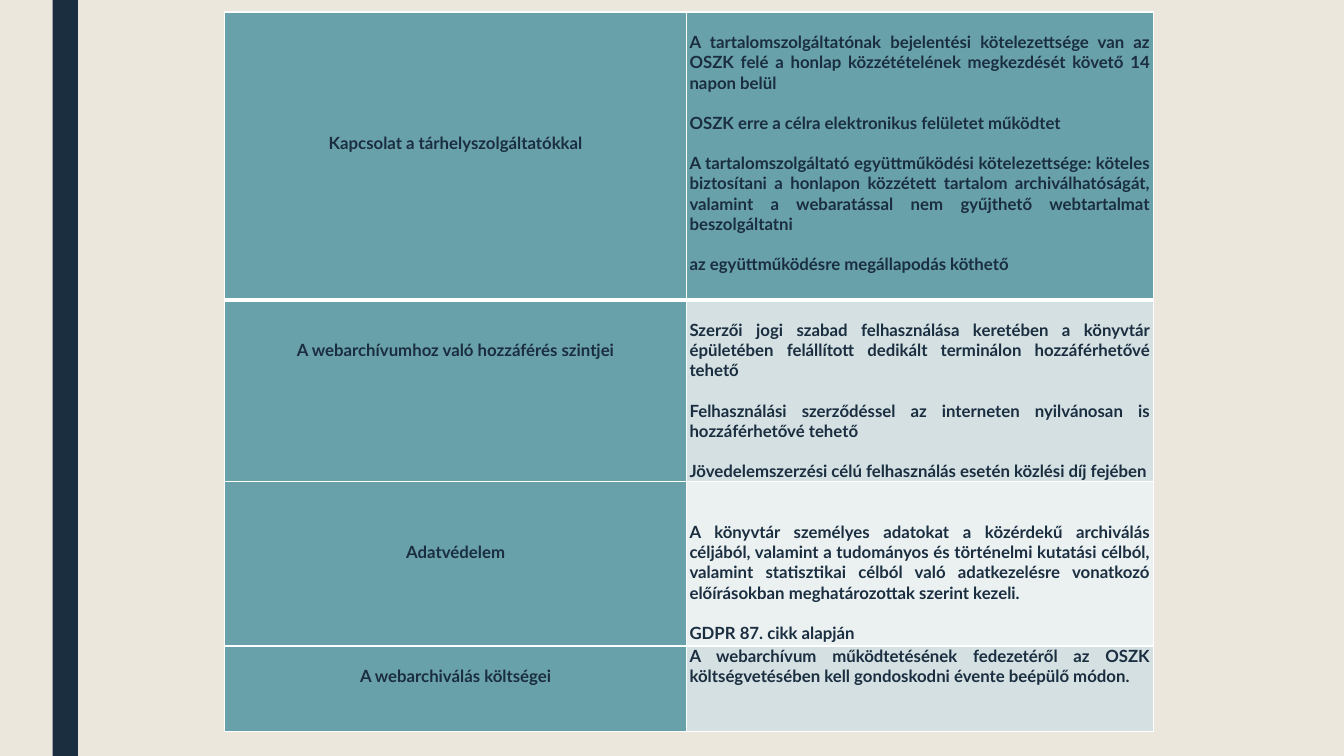
from dataclasses import dataclass

from lxml import etree
from pptx import Presentation
from pptx.dml.color import RGBColor
from pptx.enum import shapes, text
from pptx.oxml import ns
from pptx.util import Pt


@dataclass(frozen=True)
class Theme:
    background: str = "EBE7DD"
    navy: str = "1A2E40"
    teal: str = "69A1AB"
    mist: str = "D4E0E2"
    pale: str = "EBF0F1"
    border: str = "FFFFFF"
    font: str = "Lato"
    size: float = 12
    line: float = 14.4  # height of one text line
    thin: float = 1
    thick: float = 3


THEME = Theme()
SLIDE_SIZE = (960, 540)
TABLE_LEFT, TABLE_TOP = 160.6, 8.6
COLUMN_WIDTHS = (329.8, 333.4)
CELL_INSET = 2.16

# Each row: height, (topic, lines above), (paragraphs, lines above), answer fill
ROWS = [
    (205.5, ("Kapcsolat a tárhelyszolgáltatókkal", 6), ([
        "A tartalomszolgáltatónak bejelentési kötelezettsége van az OSZK felé "
        "a honlap közzétételének megkezdését követő 14 napon belül",
        "OSZK erre a célra elektronikus felületet működtet",
        "A tartalomszolgáltató együttműködési kötelezettsége: köteles biztosítani "
        "a honlapon közzétett tartalom archiválhatóságát, valamint a webaratással "
        "nem gyűjthető webtartalmat beszolgáltatni",
        "az együttműködésre megállapodás köthető",
    ], 1), THEME.teal),
    (130, ("A webarchívumhoz való hozzáférés szintjei", 2), ([
        "Szerzői jogi szabad felhasználása keretében a könyvtár épületében "
        "felállított dedikált terminálon hozzáférhetővé tehető",
        "Felhasználási szerződéssel az interneten nyilvánosan is hozzáférhetővé tehető",
        "Jövedelemszerzési célú felhasználás esetén közlési díj fejében",
    ], 1), THEME.mist),
    (117.4, ("Adatvédelem", 3), ([
        "A könyvtár személyes adatokat a közérdekű archiválás céljából, valamint "
        "a tudományos és történelmi kutatási célból, valamint statisztikai célból "
        "való adatkezelésre vonatkozó előírásokban meghatározottak szerint kezeli.",
        "GDPR 87. cikk alapján",
    ], 2), THEME.pale),
    (61, ("A webarchiválás költségei", 1), ([
        "A webarchívum működtetésének fedezetéről az OSZK költségvetésében kell "
        "gondoskodni évente beépülő módon.",
    ], 0), THEME.mist),
]


def color(value):
    return RGBColor.from_string(value)


def add_side_bar(slide):
    bar = slide.shapes.add_shape(shapes.MSO_SHAPE.RECTANGLE,
                                 Pt(37.6), Pt(0), Pt(18), Pt(SLIDE_SIZE[1]))
    bar.shadow.inherit = False
    bar.fill.solid()
    bar.fill.fore_color.rgb = color(THEME.navy)
    bar.line.fill.background()


def set_borders(cell, top, bottom):
    widths = {"L": THEME.thin, "R": THEME.thin, "T": top, "B": bottom}
    properties = cell._tc.get_or_add_tcPr()
    # Border lines must come before the fill
    for index, (side, width) in enumerate(widths.items()):
        line = etree.Element(ns.qn(f"a:ln{side}"), w=str(Pt(width)))
        fill = etree.SubElement(line, ns.qn("a:solidFill"))
        etree.SubElement(fill, ns.qn("a:srgbClr"), val=THEME.border)
        properties.insert(index, line)


def fill_cell(cell, paragraphs, lines_above, alignment, fill):
    cell.fill.solid()
    cell.fill.fore_color.rgb = color(fill)
    cell.margin_left = cell.margin_right = Pt(CELL_INSET)
    cell.margin_top, cell.margin_bottom = Pt(lines_above * THEME.line), Pt(0)
    cell.vertical_anchor = text.MSO_ANCHOR.TOP
    frame = cell.text_frame
    for index, content in enumerate(paragraphs):
        paragraph = frame.add_paragraph() if index else frame.paragraphs[0]
        paragraph.alignment = alignment
        paragraph.space_before = Pt(THEME.line if index else 0)
        run = paragraph.add_run()
        run.text = content
        run.font.name = THEME.font
        run.font.size = Pt(THEME.size)
        run.font.bold = True
        run.font.color.rgb = color(THEME.navy)


def add_topic_table(slide):
    heights = [row[0] for row in ROWS]
    table = slide.shapes.add_table(
        len(ROWS), len(COLUMN_WIDTHS), Pt(TABLE_LEFT), Pt(TABLE_TOP),
        Pt(sum(COLUMN_WIDTHS)), Pt(sum(heights))).table
    table.first_row = table.horz_banding = False
    for column, width in zip(table.columns, COLUMN_WIDTHS):
        column.width = Pt(width)
    for index, (height, topic, answer, answer_fill) in enumerate(ROWS):
        table.rows[index].height = Pt(height)
        topic_cell, answer_cell = table.cell(index, 0), table.cell(index, 1)
        fill_cell(topic_cell, [topic[0]], topic[1], text.PP_ALIGN.CENTER, THEME.teal)
        fill_cell(answer_cell, *answer, text.PP_ALIGN.JUSTIFY, answer_fill)
        # A thick line separates the first row from the rest
        for cell in (topic_cell, answer_cell):
            set_borders(cell,
                        top=THEME.thick if index == 1 else THEME.thin,
                        bottom=THEME.thick if index == 0 else THEME.thin)


def main():
    presentation = Presentation()
    presentation.slide_width, presentation.slide_height = map(Pt, SLIDE_SIZE)
    slide = presentation.slides.add_slide(presentation.slide_layouts[6])

    # Background and side bar
    slide.background.fill.solid()
    slide.background.fill.fore_color.rgb = color(THEME.background)
    add_side_bar(slide)

    # Topics and rules
    add_topic_table(slide)
    presentation.save("out.pptx")


if __name__ == "__main__":
    main()
